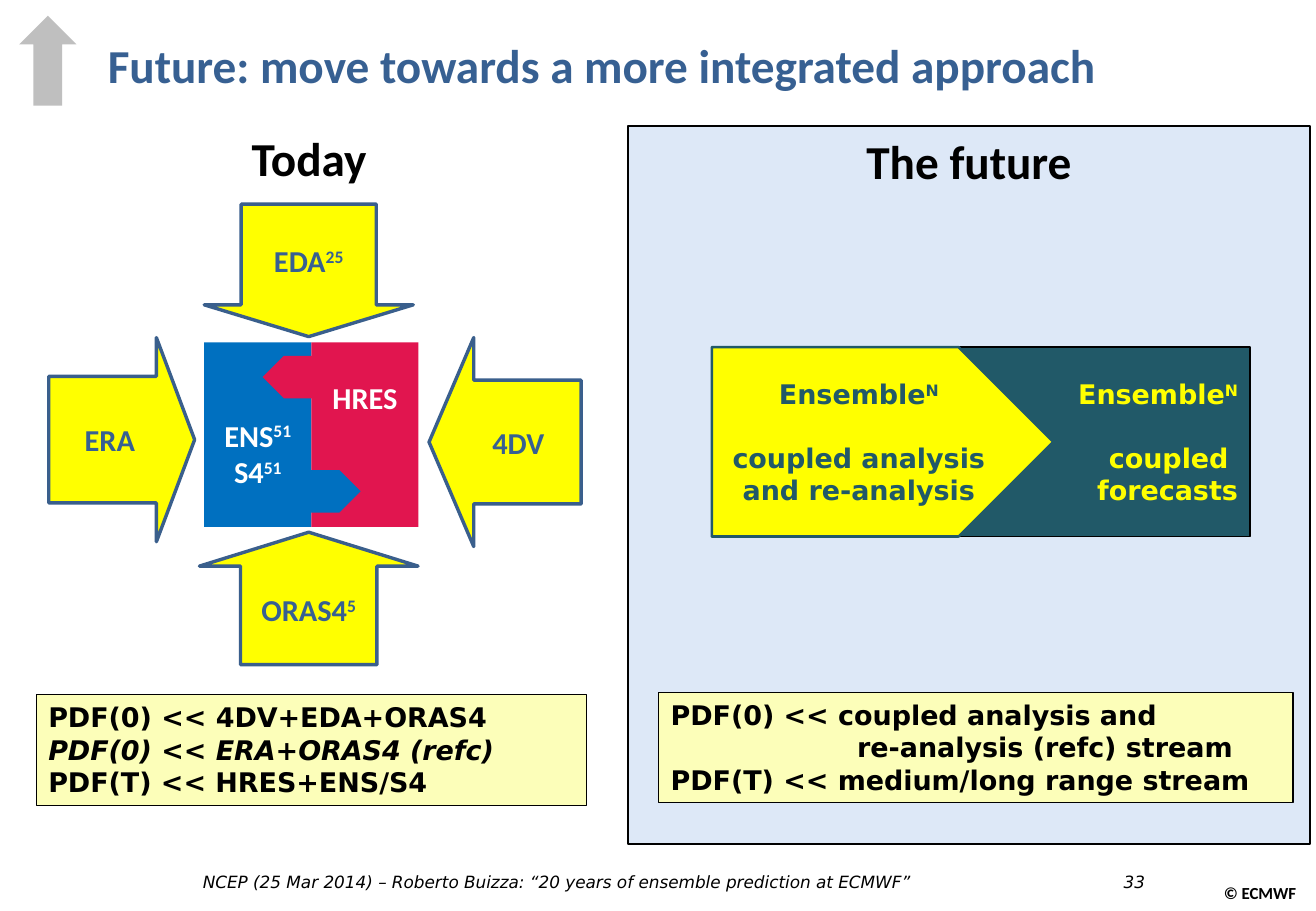
from pptx import Presentation
from pptx.dml.color import RGBColor
from pptx.enum.shapes import MSO_SHAPE
from pptx.enum.text import MSO_ANCHOR, PP_ALIGN
from pptx.util import Cm, Pt

BLUE, RED, YELLOW, TEAL = "0070C0", "E1154F", "FFFF00", "215968"
TITLE_BLUE, OUTLINE_BLUE = "376092", "3A5F8C"
CREAM, PANEL, BLACK, WHITE = "FCFEB9", "DDE8F7", "000000", "FFFFFF"
SANS = "DejaVu Sans"


def color(value):
    return RGBColor.from_string(value)


def write(shape, lines, size, ink=BLACK, font="Calibri", bold=True, italic=False,
          align=PP_ALIGN.CENTER, anchor=MSO_ANCHOR.MIDDLE):
    """Fill a shape with lines; text after ^ is superscript."""
    frame = shape.text_frame
    frame.word_wrap = True
    frame.vertical_anchor = anchor
    for index, line in enumerate(lines):
        paragraph = frame.paragraphs[0] if index == 0 else frame.add_paragraph()
        paragraph.alignment = align
        paragraph.font.name = font
        paragraph.font.size = Pt(size)
        paragraph.font.bold = bold
        paragraph.font.italic = italic
        paragraph.font.color.rgb = color(ink)
        base, _, power = line.partition("^")
        paragraph.add_run().text = base
        if power:
            run = paragraph.add_run()
            run.text = power
            run.font._element.set("baseline", "30000")
    return frame


def add_block(slide, kind, left, top, width, height, fill, line=None, weight=1):
    shape = slide.shapes.add_shape(kind, Cm(left), Cm(top), Cm(width), Cm(height))
    shape.shadow.inherit = False
    shape.fill.solid()
    shape.fill.fore_color.rgb = color(fill)
    if line:
        shape.line.color.rgb = color(line)
        shape.line.width = Pt(weight)
    else:
        shape.line.fill.background()
    return shape


def add_label(slide, left, top, width, height, text, size, **style):
    box = slide.shapes.add_textbox(Cm(left), Cm(top), Cm(width), Cm(height))
    write(box, [text], size, anchor=MSO_ANCHOR.TOP, **style)
    return box


def add_summary(slide, left, top, width, lines):
    box = add_block(slide, MSO_SHAPE.RECTANGLE, left, top, width, 2.31, CREAM, BLACK, 0.75)
    return write(box, lines, 16, font=SANS, align=PP_ALIGN.LEFT, anchor=MSO_ANCHOR.TOP)


def add_header(slide, left, top, width, height):
    # Plain shape in the corner
    add_block(slide, MSO_SHAPE.UP_ARROW, left + 0.2, top, 1.2, height, "BFBFBF")
    title = slide.shapes.title
    title.left, title.top = Cm(left + 1.8), Cm(top + 0.08)
    title.width, title.height = Cm(width - 1.8), Cm(height)
    write(title, ["Future: move towards a more integrated approach"], 28, TITLE_BLUE,
          align=PP_ALIGN.LEFT)


def add_today(slide, left, top, width):
    add_label(slide, left + 3.7, top, 4, 1.45, "Today", 28)

    # Forecast systems in the centre
    center_left, center_top, half, height = left + 3.51, top + 4.59, 2.24, 3.86
    ens = add_block(slide, MSO_SHAPE.RECTANGLE, center_left, center_top, half, height, BLUE)
    write(ens, ["ENS^51", "S4^51"], 18, WHITE).margin_top = Cm(0.9)
    hres = add_block(slide, MSO_SHAPE.RECTANGLE, center_left + half, center_top, half, height, RED)
    write(hres, ["HRES"], 18, WHITE).margin_bottom = Cm(1.68)

    # Tabs that link the two halves
    for x, y, fill, turn in [(1.22, 0.28, RED, 180), (2.18, 2.67, BLUE, 0)]:
        tab = add_block(slide, MSO_SHAPE.PENTAGON, center_left + x, center_top + y, 1.09, 0.89, fill)
        tab.rotation = turn

    # Inputs pointing to the centre
    inputs = [
        (MSO_SHAPE.DOWN_ARROW, 3.51, 1.7, 4.37, 2.77, (0.646, 0.24), "EDA^25"),
        (MSO_SHAPE.UP_ARROW, 3.41, 8.56, 4.57, 2.77, (0.624, 0.256), "ORAS4^5"),
        (MSO_SHAPE.RIGHT_ARROW, 0.26, 4.49, 3.05, 4.27, (0.62, 0.262), "ERA"),
        (MSO_SHAPE.LEFT_ARROW, 8.21, 4.49, 3.18, 4.37, (0.592, 0.294), "4DV"),
    ]
    for kind, x, y, w, h, proportions, text in inputs:
        arrow = add_block(slide, kind, left + x, top + y, w, h, YELLOW, OUTLINE_BLUE, 2)
        arrow.adjustments[0], arrow.adjustments[1] = proportions
        write(arrow, [text], 18, TITLE_BLUE)

    summary = add_summary(slide, left, top + 11.96, width, [
        "PDF(0) << 4DV+EDA+ORAS4", "PDF(0) << ERA+ORAS4 (refc)", "PDF(T) << HRES+ENS/S4"])
    summary.paragraphs[1].font.italic = True


def add_future(slide, left, top, width, height):
    panel = add_block(slide, MSO_SHAPE.RECTANGLE, left, top, width, height, PANEL, BLACK)
    write(panel, ["The future"], 28, anchor=MSO_ANCHOR.TOP)

    # Analysis feeding the forecasts
    stages = [
        (MSO_SHAPE.RECTANGLE, 6.17, 6.83, TEAL, BLACK, 1, YELLOW, PP_ALIGN.RIGHT,
         ["coupled ", "forecasts"]),
        (MSO_SHAPE.PENTAGON, 1.75, 7.14, YELLOW, TEAL, 1.5, TEAL, PP_ALIGN.CENTER,
         ["coupled analysis", "and re-analysis"]),
    ]
    for kind, x, w, fill, line, weight, ink, align, lines in stages:
        stage = add_block(slide, kind, left + x, top + 4.62, w, 3.96, fill, line, weight)
        frame = write(stage, ["Ensemble^N"] + lines, 16, ink, SANS, align=align)
        frame.paragraphs[1].space_before = Pt(18.6)

    summary = add_summary(slide, left + 0.64, top + 11.84, 13.26, [
        "PDF(0) << coupled analysis and", "re-analysis (refc) stream",
        "PDF(T) << medium/long range stream"])
    # Continuation line is indented
    summary.paragraphs[1]._p.get_or_add_pPr().set("marL", str(Cm(3.9)))


def add_footer(slide, left, top):
    note = dict(font=SANS, bold=False, italic=True, align=PP_ALIGN.LEFT)
    add_label(slide, left, top, 17, 0.69,
              "NCEP (25 Mar 2014) – Roberto Buizza: “20 years of ensemble prediction at ECMWF”",
              10, **note)
    add_label(slide, left + 19.25, top, 1.5, 0.69, "33", 10, **note)
    add_label(slide, left + 21.18, top + 0.23, 2.34, 0.69, "© ECMWF", 10)


def main():
    presentation = Presentation()
    presentation.slide_width, presentation.slide_height = Cm(27.51), Cm(19.05)
    slide = presentation.slides.add_slide(presentation.slide_layouts[5])
    add_header(slide, 0.2, 0.33, 26.57, 1.88)
    add_today(slide, 0.76, 2.57, 11.51)
    add_future(slide, 13.13, 2.64, 14.25, 15.01)
    add_footer(slide, 3.99, 18.11)
    presentation.save("out.pptx")


if __name__ == "__main__":
    main()
